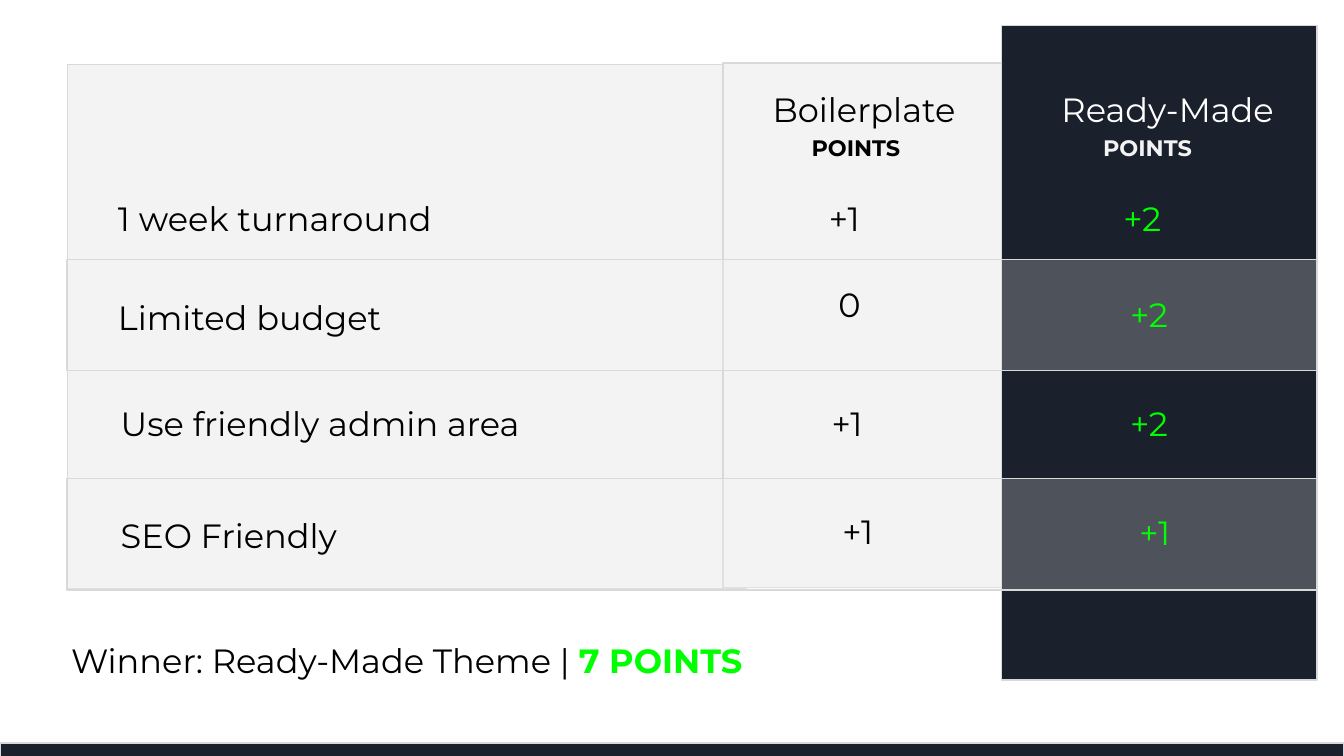
from lxml.etree import SubElement
from pptx import Presentation
from pptx.dml.color import RGBColor
from pptx.enum.shapes import MSO_SHAPE
from pptx.enum.text import MSO_ANCHOR
from pptx.oxml.ns import qn
from pptx.util import Inches, Pt

COLUMNS, ROWS = 100, 56.25
WIDTH, HEIGHT = Inches(10), Inches(5.625)
FONT = "Montserrat"
BLACK, WHITE, NAVY = "000000", "FFFFFF", "1B212C"
PALE, RULE, GREEN = "F3F3F3", "D9D9D9", "00FF00"

CRITERIA = [
    ("1 week turnaround", (7.8, 13.7), "+1", (60.7, 13.7), "+2", (82.6, 13.7)),
    ("Limited budget", (7.8, 21.1), "0", (61.4, 20.1), "+2", (83.1, 20.9)),
    ("Use friendly admin area", (8, 29), "+1", (60.9, 29), "+2", (83.1, 29)),
    ("SEO Friendly", (8, 37.3), "+1", (61.7, 37), "+1", (83.8, 37.1)),
]


def color(hex_code):
    return RGBColor.from_string(hex_code)


def grid_box(column, row, columns, rows):
    across, down = WIDTH / COLUMNS, HEIGHT / ROWS
    return [round(n) for n in
            (column * across, row * down, columns * across, rows * down)]


def add_panel(slide, box, fill, opacity=100):
    panel = slide.shapes.add_shape(MSO_SHAPE.RECTANGLE, *grid_box(*box))
    panel.shadow.inherit = False
    panel.fill.solid()
    panel.fill.fore_color.rgb = color(fill)
    panel.line.color.rgb = color(RULE)
    panel.line.width = Pt(0.75)
    if opacity < 100:
        tint = panel.fill._xPr.find(qn("a:solidFill"))[0]
        SubElement(tint, qn("a:alpha")).set("val", str(opacity * 1000))


def style_run(run, ink, size, bold):
    run.font.name = FONT
    run.font.size = Pt(size)
    run.font.bold = bold
    run.font.color.rgb = color(ink)


def add_label(slide, text, box, ink=BLACK, size=18, bold=False):
    label = slide.shapes.add_textbox(*grid_box(*box))
    frame = label.text_frame
    frame.word_wrap = True
    frame.vertical_anchor = MSO_ANCHOR.TOP
    frame.margin_left = frame.margin_right = Inches(0.1)
    frame.margin_top = frame.margin_bottom = Inches(0.1)
    frame.text = text
    style_run(frame.paragraphs[0].runs[0], ink, size, bold)
    return frame.paragraphs[0]


def add_heading(slide, theme, theme_column, points_column, ink, points_ink):
    add_label(slide, theme, (theme_column, 5.6, 18, 4.4), ink)
    add_label(slide, "POINTS", (points_column, 9, 16.4, 4.4), points_ink, 12, True)


def add_criterion(slide, criterion, place, boilerplate, boilerplate_place,
                  ready_made, ready_made_place):
    add_label(slide, criterion, (*place, 44, 5.3))
    add_label(slide, boilerplate, (*boilerplate_place, 8.7, 5.3))
    add_label(slide, ready_made, (*ready_made_place, 8.7, 5.3), GREEN)


def add_winner(slide):
    verdict = add_label(slide, "Winner: Ready-Made Theme | ", (4.3, 46.6, 60.5, 5.3))
    score = verdict.add_run()
    score.text = "7 POINTS"
    style_run(score, GREEN, 18, True)


def main():
    deck = Presentation()
    deck.slide_width, deck.slide_height = WIDTH, HEIGHT
    slide = deck.slides.add_slide(deck.slide_layouts[6])

    add_panel(slide, (5, 4.8, 50.5, 39), PALE)
    add_panel(slide, (53.8, 4.7, 24.9, 39), PALE)
    add_panel(slide, (74.5, 1.9, 23.5, 48.7), NAVY)
    add_panel(slide, (0, 55.3, 100, 1.3), NAVY)
    for band_row in (19.3, 35.6):
        add_panel(slide, (5, band_row, 93, 8.3), PALE, 24)

    add_heading(slide, "Boilerplate", 56.5, 59.4, BLACK, BLACK)
    add_heading(slide, "Ready-Made", 78, 81.1, WHITE, PALE)
    for criterion in CRITERIA:
        add_criterion(slide, *criterion)
    add_winner(slide)

    deck.save("out.pptx")


if __name__ == "__main__":
    main()
